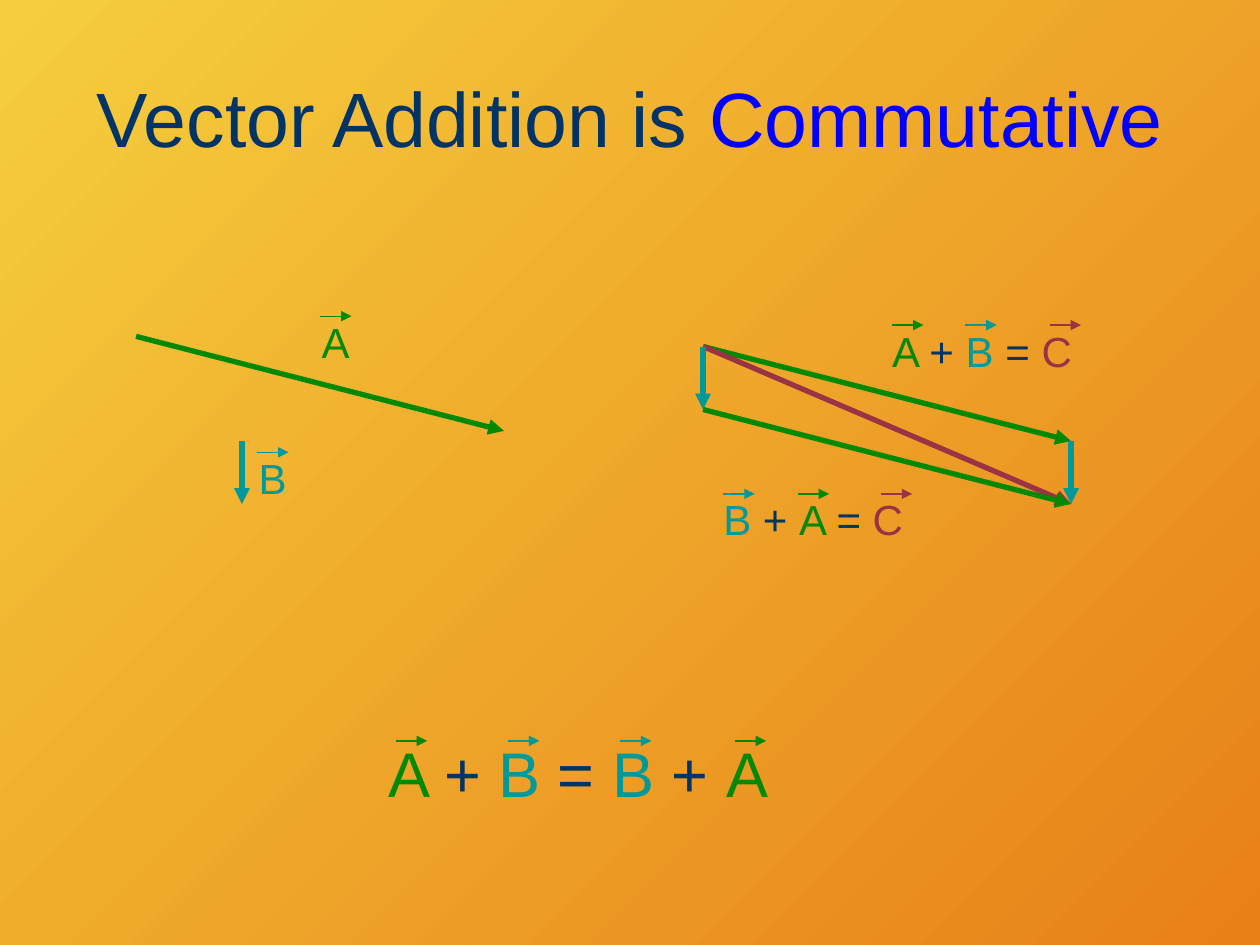
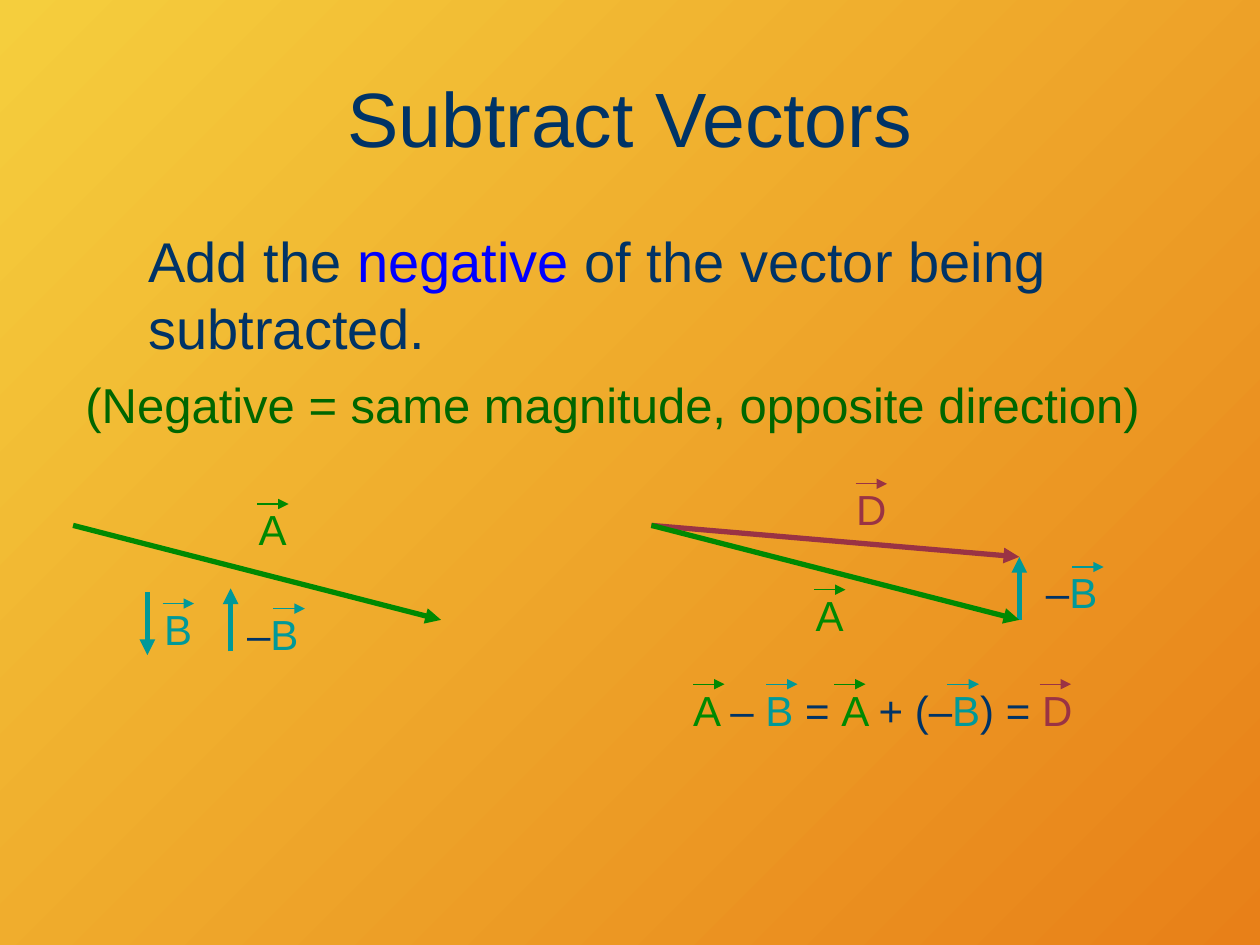
from dataclasses import dataclass

from lxml import etree
from pptx import Presentation
from pptx.dml.color import RGBColor
from pptx.enum.shapes import MSO_CONNECTOR
from pptx.enum.text import MSO_ANCHOR, MSO_AUTO_SIZE, PP_ALIGN
from pptx.oxml.ns import qn
from pptx.util import Inches, Pt

STRAIGHT = MSO_CONNECTOR.STRAIGHT
MIDDLE = MSO_ANCHOR.MIDDLE
NO_AUTOFIT = MSO_AUTO_SIZE.NONE
LEFT, CENTER = PP_ALIGN.LEFT, PP_ALIGN.CENTER
TITLE_ONLY = 5

# Horizontal and vertical components in inches; C = A + B, D = A - B
COMPONENTS = {"A": (2.92, 0.75), "B": (0, 0.5), "C": (2.92, 1.25), "D": (2.92, 0.25)}
HAT_LENGTH = 0.25


@dataclass(frozen=True)
class Theme:
    font: str = "Arial"
    ink: str = "003366"
    accent: str = "0000FF"
    note: str = "006600"
    vector_a: str = "008901"
    vector_b: str = "009999"
    result: str = "9A3344"
    background_start: str = "F5CE3D"
    background_end: str = "E88018"
    title_size: int = 44
    equation_size: int = 36
    body_size: int = 32
    note_size: int = 28
    label_size: int = 24
    vector_weight: float = 3
    hat_weight: float = 0.75

    def symbol_color(self, symbol):
        colors = {"A": self.vector_a, "B": self.vector_b, "C": self.result, "D": self.result}
        return colors.get(symbol, self.ink)


class VectorDeck:
    def __init__(self, theme):
        self.theme = theme
        self.deck = Presentation()
        self.deck.slide_width, self.deck.slide_height = Inches(10), Inches(7.5)
        self.page = None
        fill = self.deck.slide_master.background.fill
        fill.gradient()
        fill.gradient_angle = 315
        stop_colors = (theme.background_start, theme.background_end)
        for stop, color in zip(fill.gradient_stops, stop_colors):
            stop.color.rgb = RGBColor.from_string(color)

    def new_page(self, spans):
        self.page = self.deck.slides.add_slide(self.deck.slide_layouts[TITLE_ONLY])
        title = self.page.shapes.title
        title.left, title.top = Inches(0.5), Inches(0.3)
        title.width, title.height = Inches(9), Inches(1.25)
        frame = title.text_frame
        frame.auto_size = NO_AUTOFIT
        frame.vertical_anchor = MIDDLE
        self.add_spans(frame.paragraphs[0], spans, self.theme.title_size, CENTER)

    def add_spans(self, para, spans, size, align):
        para.alignment = align
        for text, color in spans:
            span = para.add_run()
            span.text = text
            span.font.name = self.theme.font
            span.font.size = Pt(size)
            span.font.color.rgb = RGBColor.from_string(color)

    def text(self, spans, left, top, width, height, size, align=LEFT, margins=True):
        box = self.page.shapes.add_textbox(*map(Inches, (left, top, width, height)))
        frame = box.text_frame
        frame.word_wrap = True
        if not margins:
            frame.margin_left = frame.margin_right = 0
            frame.margin_top = frame.margin_bottom = 0
        self.add_spans(frame.paragraphs[0], spans, size, align)

    def arrow(self, start, end, color, weight):
        line = self.page.shapes.add_connector(STRAIGHT, *map(Inches, (*start, *end)))
        line.line.color.rgb = RGBColor.from_string(color)
        line.line.width = Pt(weight)
        properties = line._element.spPr
        tip = etree.SubElement(properties.find(qn("a:ln")), qn("a:tailEnd"))
        tip.set("type", "triangle")
        etree.SubElement(properties, qn("a:effectLst"))

    def vector(self, name, left, top, sign=1):
        """Draw a named vector from its start point; sign -1 reverses it."""
        across, down = COMPONENTS[name]
        end = (left + sign * across, top + sign * down)
        self.arrow((left, top), end, self.theme.symbol_color(name), self.theme.vector_weight)

    def symbol_spans(self, text):
        """Split an equation into coloured spans; a space joins the symbol before it."""
        spans = []
        for symbol in text:
            color = spans[-1][1] if symbol == " " else self.theme.symbol_color(symbol)
            if spans and spans[-1][1] == color:
                spans[-1] = (spans[-1][0] + symbol, color)
            else:
                spans.append((symbol, color))
        return spans

    def equation(self, text, left, top, width, hats, size=None, align=LEFT, drop=0):
        """Set an equation with a small arrow above each vector letter.

        hats are the arrows' distances from the left of the equation.
        """
        size = size or self.theme.label_size
        height = 0.4 * size / self.theme.label_size
        self.text(self.symbol_spans(text), left, top, width, height, size, align, margins=False)
        letters = [symbol for symbol in text if symbol in COMPONENTS]
        for letter, offset in zip(letters, hats):
            start, y = left + offset, top + drop
            self.arrow((start, y), (start + HAT_LENGTH, y),
                       self.theme.symbol_color(letter), self.theme.hat_weight)

    def label(self, text, left, top):
        """Name a vector, with or without a minus sign."""
        width, hat = (0.33, 0.04) if len(text) == 1 else (0.67, 0.34)
        self.equation(text, left, top, width, [hat], align=CENTER)


def add_commutative_page(deck):
    theme = deck.theme
    deck.new_page([("Vector Addition is ", theme.ink), ("Commutative", theme.accent)])

    left, top = 5.58, 2.75
    deck.vector("A", left, top)
    deck.vector("C", left, top)
    deck.vector("B", left + 2.92, top + 0.75)
    deck.equation("A + B = C", 7.08, 2.58, 1.58, [0, 0.58, 1.25])

    deck.vector("A", 1.08, 2.67)
    deck.label("A", 2.5, 2.51)
    deck.vector("B", 1.92, 3.5)
    deck.label("B", 2, 3.59)

    deck.equation("B + A = C", 5.74, 3.92, 1.58, [0, 0.59, 1.25])
    deck.vector("B", left, top)
    deck.vector("A", left, top + 0.5)

    deck.equation("A + B = B + A", 3.08, 5.83, 3.5, [0.06, 0.95, 1.84, 2.75],
                  theme.equation_size, drop=0.05)


def add_subtract_page(deck):
    theme = deck.theme
    deck.new_page([("Subtract Vectors", theme.ink)])

    deck.vector("A", 0.58, 4.17)
    deck.vector("B", 1.17, 4.7)
    deck.label("A", 2, 4)
    deck.label("B", 1.25, 4.79)
    deck.text([("Add the ", theme.ink), ("negative", theme.accent),
               (" of the vector being subtracted.", theme.ink)],
              1.08, 1.75, 7.92, 1.17, theme.body_size)
    deck.vector("B", 1.83, 5.17, sign=-1)
    deck.label("–B", 1.83, 4.83)

    deck.equation("A – B = A + (–B) = D", 5.5, 5.43, 3.42, [0, 0.58, 1.12, 2.02, 2.75])
    left, top = 5.17, 4.17
    deck.label("D", 6.75, 3.84)
    deck.vector("D", left, top)
    deck.vector("B", left + 2.92, top + 0.75, sign=-1)
    deck.label("–B", 8.17, 4.5)
    deck.vector("A", left, top)
    deck.label("A", 6.42, 4.68)
    deck.text([("(Negative = same magnitude, opposite direction)", theme.note)],
              0.58, 2.92, 8.62, 1.17, theme.note_size)


def main():
    deck = VectorDeck(Theme())
    add_commutative_page(deck)
    add_subtract_page(deck)
    deck.deck.save("out.pptx")


if __name__ == "__main__":
    main()
